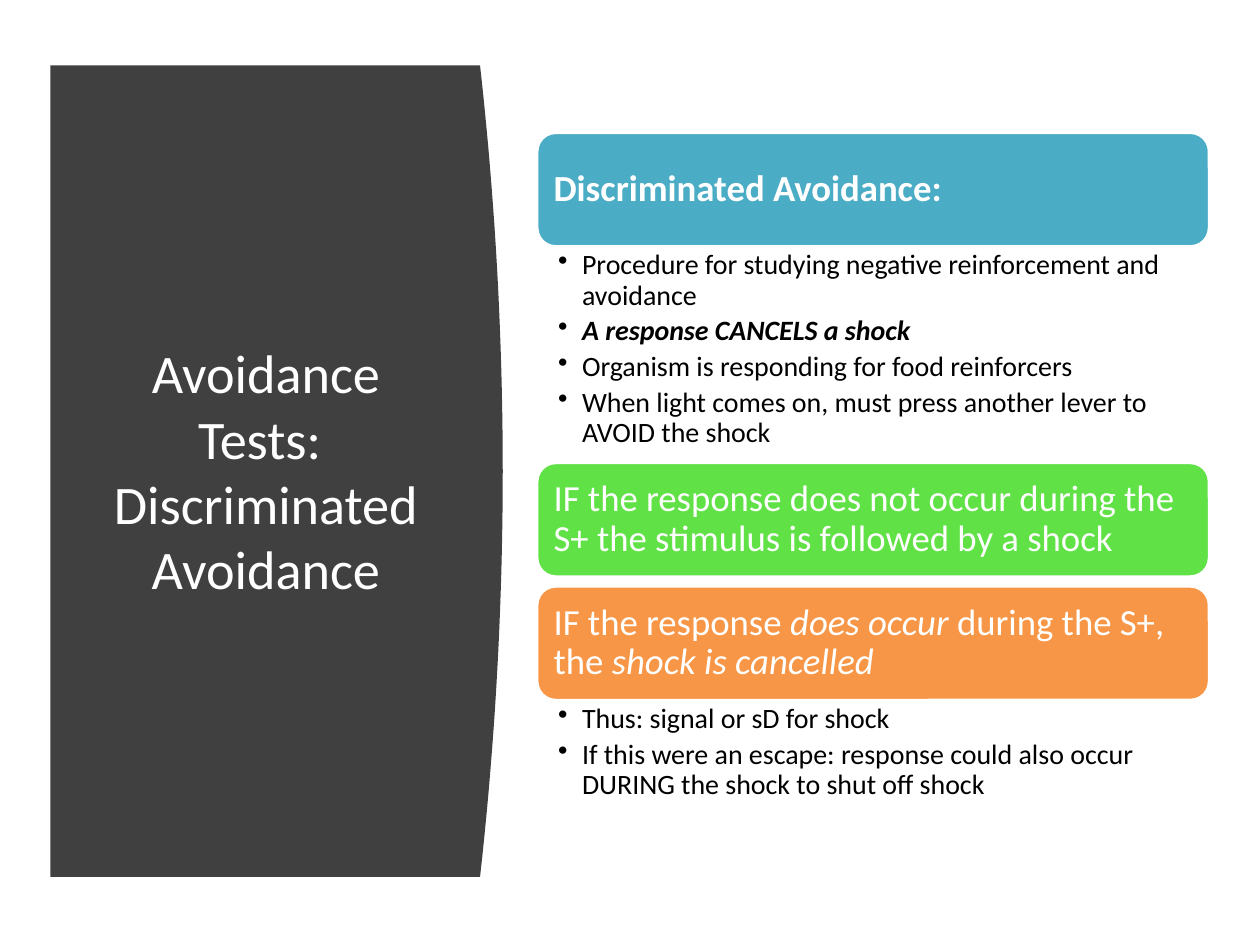
from typing import NamedTuple

from lxml.etree import SubElement
from pptx import Presentation
from pptx.dml.color import RGBColor
from pptx.enum.shapes import MSO_SHAPE as Shape
from pptx.enum.text import MSO_ANCHOR as Anchor, PP_ALIGN as Align
from pptx.oxml.ns import qn
from pptx.util import Inches, Pt

COLORS = {
    "panel": "404040", "white": "FFFFFF", "black": "000000",
    "teal": "4BACC6", "green": "60E146", "orange": "F79646",
}
FONT = "Calibri"
LEFT, WIDTH, BAR_HEIGHT = 4.26, 5.34, 0.91


class Span(NamedTuple):
    text: str
    bold: bool = False
    italic: bool = False


class Section(NamedTuple):
    top: float
    color: str
    heading: list[Span]
    bullets: list[Span] = []
    bullets_height: float = 0


SECTIONS = [
    Section(1.05, "teal", [Span("Discriminated Avoidance:", bold=True)], [
        Span("Procedure for studying negative reinforcement and avoidance"),
        Span("A response CANCELS a shock", bold=True, italic=True),
        Span("Organism is responding for food reinforcers"),
        Span("When light comes on, must press another lever to AVOID the shock"),
    ], 1.71),
    Section(3.67, "green", [
        Span("IF the response does not occur during the S+ "
             "the stimulus is followed by a shock"),
    ]),
    Section(4.65, "orange", [
        Span("IF the response "), Span("does occur ", italic=True),
        Span("during the S+, the "), Span("shock is cancelled", italic=True),
    ], [
        Span("Thus: signal or sD for shock"),
        Span("If this were an escape: response could also occur "
             "DURING the shock to shut off shock"),
    ], 0.86),
]


def rgb(name: str) -> RGBColor:
    return RGBColor.from_string(COLORS[name])


def write(box, paragraphs: list[list[Span]], *, size: float, color: str,
          align=Align.LEFT, anchor=Anchor.TOP, margins=(0.1, 0.05),
          line_spacing: float = 1.0, space_after: float = 0,
          bulleted: bool = False) -> None:
    """Fill a shape with paragraphs made of spans; a newline is a line break."""
    frame = box.text_frame
    frame.word_wrap = True
    frame.vertical_anchor = anchor
    frame.margin_left = frame.margin_right = Inches(margins[0])
    frame.margin_top = frame.margin_bottom = Inches(margins[1])
    for index, spans in enumerate(paragraphs):
        para = frame.add_paragraph() if index else frame.paragraphs[0]
        para.alignment = align
        para.line_spacing = line_spacing
        para.space_after = Pt(space_after)
        if bulleted:
            add_bullet(para)
        for span in spans:
            for number, line in enumerate(span.text.split("\n")):
                if number:
                    para.add_line_break()
                run = para.add_run()
                run.text = line
                run.font.name = FONT
                run.font.size = Pt(size)
                run.font.bold = span.bold
                run.font.italic = span.italic
                run.font.color.rgb = rgb(color)


def add_bullet(para, indent: float = 0.19) -> None:
    properties = para._p.get_or_add_pPr()
    properties.set("marL", str(Inches(indent)))
    properties.set("indent", str(-Inches(indent)))
    SubElement(properties, qn("a:buChar")).set("char", "•")


def draw_panel(page) -> None:
    """Dark panel whose right edge bulges along a parabola."""
    left, top, bottom, corner, bulge, steps = 0.4, 0.52, 6.96, 3.81, 0.18, 40
    edge = []
    for step in range(steps + 1):
        share = step / steps
        x = corner + bulge * (1 - (2 * share - 1) ** 2)
        edge.append((Inches(x), Inches(top + share * (bottom - top))))
    builder = page.shapes.build_freeform(Inches(left), Inches(top))
    builder.add_line_segments(edge + [(Inches(left), Inches(bottom))], close=True)
    panel = builder.convert_to_shape()
    panel.shadow.inherit = False
    panel.fill.solid()
    panel.fill.fore_color.rgb = rgb("panel")
    panel.line.fill.background()


def draw_section(page, section: Section) -> None:
    # Heading bar
    bar = page.shapes.add_shape(
        Shape.ROUNDED_RECTANGLE, Inches(LEFT), Inches(section.top),
        Inches(WIDTH), Inches(BAR_HEIGHT))
    bar.shadow.inherit = False
    bar.fill.solid()
    bar.fill.fore_color.rgb = rgb(section.color)
    bar.line.color.rgb = rgb("white")
    bar.line.width = Pt(2)
    write(bar, [section.heading], size=21, color="white", anchor=Anchor.MIDDLE,
          margins=(0.09, 0.09), line_spacing=0.9)

    # Bullets below the bar
    if section.bullets:
        box = page.shapes.add_textbox(
            Inches(LEFT), Inches(section.top + BAR_HEIGHT),
            Inches(WIDTH), Inches(section.bullets_height))
        write(box, [[bullet] for bullet in section.bullets], size=16,
              color="black", margins=(0.17, 0.03), line_spacing=0.9,
              space_after=3.2, bulleted=True)


def main() -> None:
    deck = Presentation()
    deck.slide_width, deck.slide_height = Inches(10), Inches(7.5)
    page = deck.slides.add_slide(deck.slide_layouts[6])

    # Title panel
    draw_panel(page)
    title = page.shapes.add_textbox(
        Inches(0.71), Inches(1.11), Inches(2.8), Inches(5.24))
    write(title, [[Span("Avoidance Tests: \nDiscriminated Avoidance")]],
          size=31, color="white", align=Align.CENTER, anchor=Anchor.MIDDLE)

    # Sections on the right
    for section in SECTIONS:
        draw_section(page, section)

    deck.save("out.pptx")


if __name__ == "__main__":
    main()
